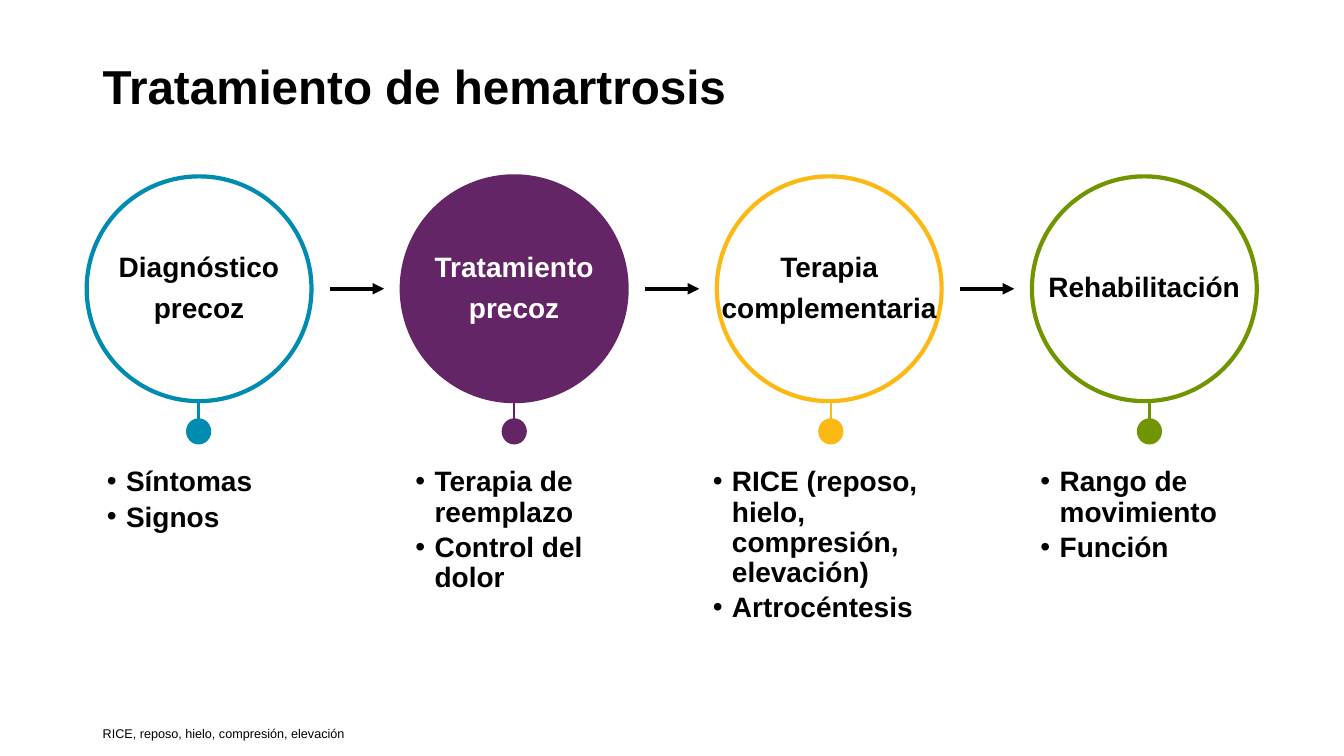
from lxml import etree
from pptx import Presentation
from pptx.dml.color import RGBColor
from pptx.enum.shapes import MSO_CONNECTOR as Connector, MSO_SHAPE as Shape
from pptx.enum.text import MSO_ANCHOR as Anchor, PP_ALIGN as Align
from pptx.oxml.ns import qn
from pptx.util import Inches, Pt

BLACK, WHITE = "000000", "FFFFFF"
CIRCLE_LEFT, CIRCLE_TOP, CIRCLE_SIZE, STEP = 0.86, 1.75, 2.23, 3.125
DOT_TOP, NOTES_TOP, NOTES_HEIGHT = 4.15, 4.5, 1.49

# colour, circle fill, circle lines, stem x, (notes left, width), bullets
STAGES = [
    ("008BB0", WHITE, ["Diagnóstico", "precoz"], 1.97, (0.92, 2.23),
     ["Síntomas", "Signos"]),
    ("642566", "642566", ["Tratamiento", "precoz"], 5.1, (3.98, 2.23),
     ["Terapia de reemplazo", "Control del dolor"]),
    ("FDB913", WHITE, ["Terapia", "complementaria"], 8.24, (6.93, 2.73),
     ["RICE (reposo, hielo, compresión, elevación)", "Artrocéntesis"]),
    ("719500", WHITE, ["Rehabilitación"], 11.4, (10.18, 2.23),
     ["Rango de movimiento", "Función"]),
]


def rgb(value):
    return RGBColor.from_string(value)


def write(shape, lines, size=20, color=BLACK, bold=True, align=Align.LEFT,
          anchor=Anchor.TOP, insets=(0.1, 0.05, 0.1, 0.05), wrap=True,
          spacing=None, after=0, bullet=False):
    frame = shape.text_frame
    frame.word_wrap = wrap
    frame.vertical_anchor = anchor
    (frame.margin_left, frame.margin_top,
     frame.margin_right, frame.margin_bottom) = map(Inches, insets)
    for i, line in enumerate(lines):
        para = frame.paragraphs[0] if i == 0 else frame.add_paragraph()
        para.text = line
        para.alignment = align
        para.line_spacing = spacing
        para.space_after = Pt(after)
        if bullet:
            props = para._p.get_or_add_pPr()
            props.set("marL", str(Inches(0.19)))
            props.set("indent", str(-Inches(0.19)))
            etree.SubElement(props, qn("a:buFont")).set("typeface", "Arial")
            etree.SubElement(props, qn("a:buChar")).set("char", "•")
        font = para.font
        font.name, font.size, font.bold = "Arial", Pt(size), bold
        font.color.rgb = rgb(color)


def add_text(slide, box, text, **style):
    write(slide.shapes.add_textbox(*map(Inches, box)), [text], **style)


def add_block(slide, kind, box, fill, line=None, weight=1):
    block = slide.shapes.add_shape(kind, *map(Inches, box))
    block.shadow.inherit = False
    block.fill.solid()
    block.fill.fore_color.rgb = rgb(fill)
    if line:
        block.line.color.rgb = rgb(line)
        block.line.width = Pt(weight)
    else:
        block.line.fill.background()
    return block


def add_line(slide, start, end, color, weight, arrow=False):
    line = slide.shapes.add_connector(
        Connector.STRAIGHT, *map(Inches, (*start, *end)))
    line.line.color.rgb = rgb(color)
    line.line.width = Pt(weight)
    if arrow:
        tail = etree.SubElement(line.line._get_or_add_ln(), qn("a:tailEnd"))
        tail.set("type", "triangle")
    etree.SubElement(line._element.spPr, qn("a:effectLst"))


def add_stage(slide, index, color, fill, label, stem_x, notes, bullets):
    left = CIRCLE_LEFT + index * STEP
    # Stem runs behind the circle and ends in the dot
    add_line(slide, (stem_x, 3.48), (stem_x, 4.25), color, 1.75)
    circle = add_block(slide, Shape.OVAL,
                       (left, CIRCLE_TOP, CIRCLE_SIZE, CIRCLE_SIZE),
                       fill, color, 3)
    write(circle, label, color=BLACK if fill == WHITE else WHITE,
          align=Align.CENTER, anchor=Anchor.MIDDLE, wrap=False,
          insets=(0, 0.14, 0, 0.14), spacing=0.9, after=8)

    # Bullets below the circle
    notes_left, notes_width = notes
    box = add_block(slide, Shape.RECTANGLE,
                    (notes_left, NOTES_TOP, notes_width, NOTES_HEIGHT),
                    WHITE, WHITE)
    write(box, bullets, insets=(0.14,) * 4, spacing=0.9, after=3.5,
          bullet=True)
    add_block(slide, Shape.OVAL, (stem_x - 0.125, DOT_TOP, 0.25, 0.26), color)

    # Arrow to the next stage
    if index < len(STAGES) - 1:
        middle = CIRCLE_TOP + CIRCLE_SIZE / 2
        start = left + CIRCLE_SIZE + 0.18
        add_line(slide, (start, middle), (start + 0.54, middle), BLACK, 2.75,
                 arrow=True)


def main():
    deck = Presentation()
    deck.slide_width, deck.slide_height = Inches(13.33), Inches(7.5)
    slide = deck.slides.add_slide(deck.slide_layouts[6])

    # Title and footnote
    add_text(slide, (0.92, 0.25, 11.5, 1.19), "Tratamiento de hemartrosis",
             size=34, anchor=Anchor.MIDDLE)
    add_text(slide, (0.92, 6.95, 10.85, 0.4),
             "RICE, reposo, hielo, compresión, elevación", size=9, bold=False,
             anchor=Anchor.BOTTOM, insets=(0.1, 0.05, 0.1, 0))

    # Four stages of care
    for index, stage in enumerate(STAGES):
        add_stage(slide, index, *stage)

    deck.save("out.pptx")


if __name__ == "__main__":
    main()
